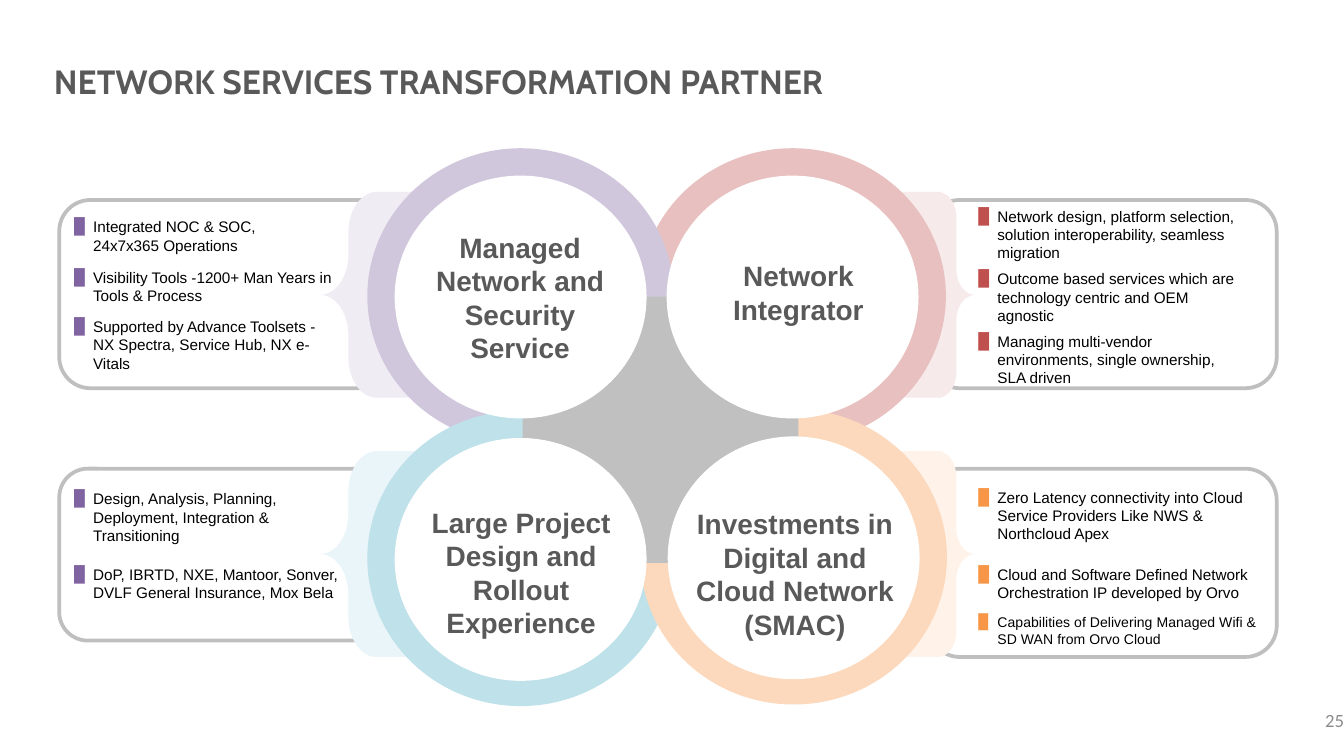
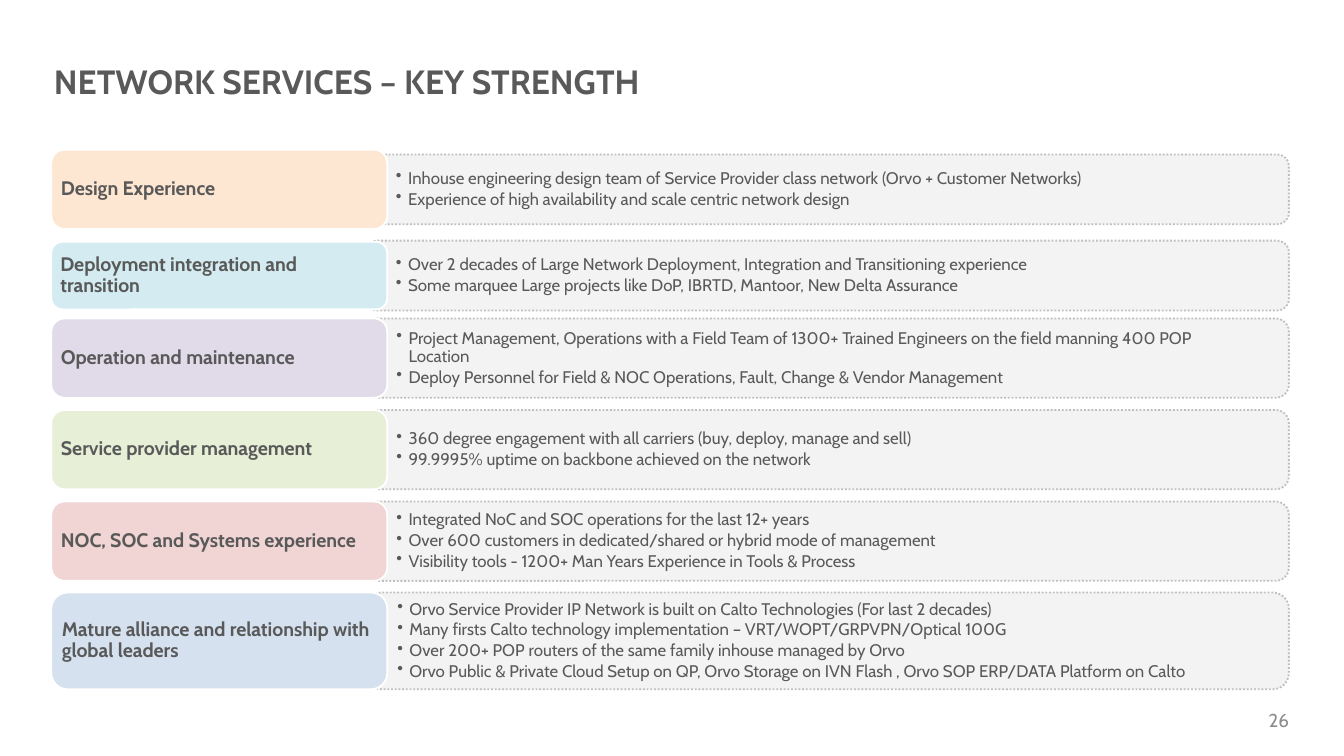
from lxml.etree import SubElement
from pptx import Presentation
from pptx.dml.color import RGBColor
from pptx.enum.dml import MSO_LINE
from pptx.enum.shapes import MSO_SHAPE
from pptx.enum.text import MSO_ANCHOR, MSO_AUTO_SIZE, PP_ALIGN
from pptx.oxml.ns import qn
from pptx.util import Cm, Pt

COLOURS = {
    "text": "595959", "black": "000000", "white": "FFFFFF", "number": "8C8C8C",
    "frame": "BFBFBF", "centre": "C0C0C0", "row": "F2F2F2",
    "purple": "8064A2", "red": "C0504D", "orange": "F79646",
    "purple ring": "D1C7DD", "red ring": "E8C0BF",
    "blue ring": "BEE1EA", "orange ring": "FCD9BC",
    "purple tab": "F0ECF4", "red tab": "F7EAEA",
    "blue tab": "E9F5F8", "orange tab": "FEF2E9",
    "design": "FDE6D2", "deployment": "D3EBF1", "operation": "E0DAE9",
    "provider": "E7EFD7", "systems": "F0D5D4", "alliance": "D5E1EF",
}

RING_WIDTH, RING_HEIGHT = 5.16, 4.95

QUADRANTS = [
    {
        "label": "Network Integrator", "label box": (0.66, 0.91, 4.06, 3),
        "ring": "red ring", "ring at": (12.4, 3.12),
        "tab": "red tab", "tab top": 3.63, "right": True,
        "frame": (17.55, 3.78, 6.58, 3.56),
        "bullet": "red", "list box": (18.49, 3.91, 5.03, 3.4),
        "items": [
            ("Network design, platform selection, solution interoperability, seamless migration", 0, 8.2),
            ("Outcome based services which are technology centric and OEM agnostic", 4, 8.2),
            ("Managing multi-vendor environments, single ownership, SLA driven", 4, 8.2),
        ],
    },
    {
        "label": "Managed Network and Security Service", "label box": (0.69, 0.76, 3.76, 3.48),
        "ring": "purple ring", "ring at": (7.26, 3.12),
        "tab": "purple tab", "tab top": 3.63, "right": False,
        "frame": (1.12, 3.78, 6.78, 3.56),
        "bullet": "purple", "list box": (1.4, 4.11, 5, 3),
        "items": [
            ("Integrated NOC & SOC,\n24x7x365 Operations", 0, 8.2),
            ("Visibility Tools -1200+ Man Years in Tools & Process", 7.5, 8.2),
            ("Supported by Advance Toolsets - NX Spectra, Service Hub, NX e-Vitals", 6.5, 8.2),
        ],
    },
    {
        "label": "Large Project Design and Rollout Experience", "label box": (0.38, 1.24, 4.42, 3),
        "ring": "blue ring", "ring at": (7.26, 8.08),
        "tab": "blue tab", "tab top": 8.53, "right": False,
        "frame": (1.12, 8.86, 7.09, 3.25),
        "bullet": "purple", "list box": (1.4, 9.25, 5.23, 2.82),
        "items": [
            ("Design, Analysis, Planning, Deployment, Integration & Transitioning", 0, 8.2),
            ("DoP, IBRTD, NXE, Mantoor, Sonver, DVLF General Insurance, Mox Bela", 11, 8.2),
        ],
    },
    {
        "label": "Investments in Digital and Cloud Network (SMAC)", "label box": (0.51, 1.4, 4.19, 2.79),
        "ring": "orange ring", "ring at": (12.42, 8.05),
        "tab": "orange tab", "tab top": 8.53, "right": True,
        "frame": (17.55, 8.86, 6.58, 3.56),
        "bullet": "orange", "list box": (18.49, 9.22, 5.45, 3.33),
        "items": [
            ("Zero Latency connectivity into Cloud Service Providers Like NWS & Northcloud Apex", 0, 8.2),
            ("Cloud and Software Defined Network Orchestration IP developed by Orvo", 12, 8.2),
            ("Capabilities of Delivering Managed Wifi & SD WAN from Orvo Cloud", 6, 7.5),
        ],
    },
]

STRENGTHS = [
    ("Design Experience", "design", 2.92, 1.32, 0.09, [
        "Inhouse engineering design team of Service Provider class network (Orvo + Customer Networks)",
        "Experience of high availability and scale centric network design",
    ]),
    ("Deployment integration and transition", "deployment", 4.55, 1.32, -0.02, [
        "Over 2 decades of Large Network Deployment, Integration and Transitioning experience",
        "Some marquee Large projects like DoP, IBRTD, Mantoor, New Delta Assurance",
    ]),
    ("Operation and maintenance", "operation", 6.02, 1.5, 0, [
        "Project Management, Operations with a Field Team of 1300+ Trained Engineers "
        "on the field manning 400 POP Location",
        "Deploy Personnel for Field & NOC Operations, Fault, Change & Vendor Management",
    ]),
    ("Service provider management", "provider", 7.75, 1.5, 0, [
        "360 degree engagement with all carriers (buy, deploy, manage and sell)",
        "99.9995% uptime on backbone achieved on the network",
    ]),
    ("NOC, SOC and Systems experience", "systems", 9.48, 1.5, 0, [
        "Integrated NoC and SOC operations for the last 12+ years",
        "Over 600 customers in dedicated/shared or hybrid mode of management",
        "Visibility tools - 1200+ Man Years Experience in Tools & Process",
    ]),
    ("Mature alliance and relationship with global leaders", "alliance", 11.2, 1.83, 0, [
        "Orvo Service Provider IP Network is built on Calto Technologies (For last 2 decades)",
        "Many firsts Calto technology implementation – VRT/WOPT/GRPVPN/Optical 100G",
        "Over 200+ POP routers of the same family inhouse managed by Orvo",
        "Orvo Public & Private Cloud Setup on QP, Orvo Storage on IVN Flash , "
        "Orvo SOP ERP/DATA Platform on Calto",
    ]),
]


def colour(name):
    return RGBColor.from_string(COLOURS[name])


def place(shape, box):
    shape.left, shape.top, shape.width, shape.height = (Cm(length) for length in box)


def set_frame(shape, insets=(0, 0, 0, 0), anchor=MSO_ANCHOR.MIDDLE):
    frame = shape.text_frame
    frame.word_wrap = True
    frame.auto_size = MSO_AUTO_SIZE.NONE
    frame.vertical_anchor = anchor
    frame.margin_left, frame.margin_top, frame.margin_right, frame.margin_bottom = (
        Cm(inset) for inset in insets)
    return frame


def add_run(para, text, font, size, ink, bold=False):
    span = para.add_run()
    span.text = text
    span.font.name = font
    span.font.size = Pt(size)
    span.font.bold = bold
    span.font.color.rgb = colour(ink)


def set_bullet(para, symbol, indent, ink):
    properties = para._p.get_or_add_pPr()
    properties.set("marL", str(Cm(indent)))
    properties.set("indent", str(-Cm(indent)))
    tint = SubElement(properties, qn("a:buClr"))
    SubElement(tint, qn("a:srgbClr"), val=COLOURS[ink])
    SubElement(properties, qn("a:buChar"), char=symbol)


def next_para(frame, index, align=PP_ALIGN.LEFT):
    para = frame.add_paragraph() if index else frame.paragraphs[0]
    para.alignment = align
    return para


def add_box(page, preset, box, fill=None, line=None, weight=1):
    shape = page.shapes.add_shape(preset, *(Cm(length) for length in box))
    shape.shadow.inherit = False
    if fill:
        shape.fill.solid()
        shape.fill.fore_color.rgb = colour(fill)
    else:
        shape.fill.background()
    if line:
        shape.line.color.rgb = colour(line)
        shape.line.width = Pt(weight)
    else:
        shape.line.fill.background()
    return shape


def add_text(page, box, text, font, size, ink, align, bold=False, insets=(0, 0, 0, 0)):
    holder = page.shapes.add_textbox(*(Cm(length) for length in box))
    para = next_para(set_frame(holder, insets), 0, align)
    add_run(para, text, font, size, ink, bold)


def start_page(deck, layout, title, number, number_right, number_font):
    page = deck.slides.add_slide(deck.slide_layouts.get_by_name(layout))
    place(page.shapes.title, (1.02, 1.02, 20.93, 1.02))
    frame = set_frame(page.shapes.title, (0, 0.13, 0.25, 0.13))
    add_run(next_para(frame, 0), title, "Cabin", 18, "text", True)
    add_text(page, (number_right - 2, 13.23, 2, 0.76), number, number_font, 10,
             "number", PP_ALIGN.RIGHT, insets=(0.25, 0.13, 0, 0.13))
    return page


def add_tab(page, quadrant):
    top, height = quadrant["tab top"], 3.89
    if quadrant["right"]:
        left, preset, cusp_left, cusp_width = 15.98, MSO_SHAPE.RIGHT_BRACE, 17.73, 0.69
    else:
        left, preset, cusp_left, cusp_width = 7.11, MSO_SHAPE.LEFT_BRACE, 6.05, 1.07
    add_box(page, MSO_SHAPE.RECTANGLE, (left, top, 1.8, height), quadrant["tab"])
    cusp = add_box(page, preset, (cusp_left, top, cusp_width, height), quadrant["tab"])
    cusp.adjustments[0] = 0.71


def fill_list(page, holder, quadrant):
    page.shapes.element.append(holder.element)
    place(holder, quadrant["list box"])
    frame = set_frame(holder, anchor=MSO_ANCHOR.TOP)
    for index, (text, gap, size) in enumerate(quadrant["items"]):
        para = next_para(frame, index)
        set_bullet(para, "█", 0.36, quadrant["bullet"])
        para.space_before = Pt(gap)
        para.line_spacing = 1.0
        for part, words in enumerate(text.split("\n")):
            if part:
                para.add_line_break()
            add_run(para, words, "Arial", size, "black")


def add_label(page, quadrant):
    left, top = quadrant["ring at"]
    dx, dy, width, height = quadrant["label box"]
    add_text(page, (left + dx, top + dy, width, height), quadrant["label"],
             "Arial", 15, "text", PP_ALIGN.CENTER, True)


def build_partner_page(deck):
    page = start_page(deck, "Comparison", "NETWORK SERVICES TRANSFORMATION PARTNER",
                      "25", 25.4, "Calibri")
    holders = [holder for holder in page.placeholders if holder.placeholder_format.idx]
    for quadrant in QUADRANTS:
        add_box(page, MSO_SHAPE.ROUNDED_RECTANGLE, quadrant["frame"], line="frame", weight=2)
    for quadrant in QUADRANTS:
        add_tab(page, quadrant)
    for quadrant in QUADRANTS:
        add_box(page, MSO_SHAPE.OVAL, (*quadrant["ring at"], RING_WIDTH, RING_HEIGHT),
                quadrant["ring"], quadrant["ring"], 18)
    add_box(page, MSO_SHAPE.RECTANGLE, (9.88, 5.61, 5.21, 5.03), "centre")
    for quadrant in QUADRANTS:
        left, top = quadrant["ring at"]
        add_box(page, MSO_SHAPE.OVAL,
                (left + 0.2, top + 0.2, RING_WIDTH - 0.4, RING_HEIGHT - 0.36), "white")
    for quadrant, holder in zip(QUADRANTS, holders):
        add_label(page, quadrant)
        fill_list(page, holder, quadrant)


def add_strength(page, label, fill, top, height, grow, points):
    body = add_box(page, MSO_SHAPE.ROUNDED_RECTANGLE, (6.91, top, 17.45, height), "row", "frame")
    body.line.dash_style = MSO_LINE.ROUND_DOT
    tint = body.fill._xPr.find(qn("a:solidFill"))[0]
    SubElement(tint, qn("a:alpha"), val="90000")
    frame = set_frame(body, (0.51, 0.33, 0.58, 0.33))
    for index, point in enumerate(points):
        para = next_para(frame, index)
        set_bullet(para, "•", 0.23, "text")
        para.line_spacing = 0.9
        para.space_after = Pt(1.35)
        add_run(para, point, "Cabin", 9, "text")
    tab = add_box(page, MSO_SHAPE.ROUNDED_RECTANGLE,
                  (0.97, top - grow, 6.35, height + 2 * grow), fill, "white")
    para = next_para(set_frame(tab, (0.11, 0.15, 0.11, 0.15)), 0)
    para.line_spacing = 0.9
    add_run(para, label, "Cabin", 10.5, "text", True)


def build_strength_page(deck):
    page = start_page(deck, "Title Only", "NETWORK SERVICES – KEY STRENGTH",
                      "26", 24.36, "Cabin")
    for strength in STRENGTHS:
        add_strength(page, *strength)


def main():
    deck = Presentation()
    deck.slide_width, deck.slide_height = Cm(25.4), Cm(14.29)
    build_partner_page(deck)
    build_strength_page(deck)
    deck.save("out.pptx")


if __name__ == "__main__":
    main()
